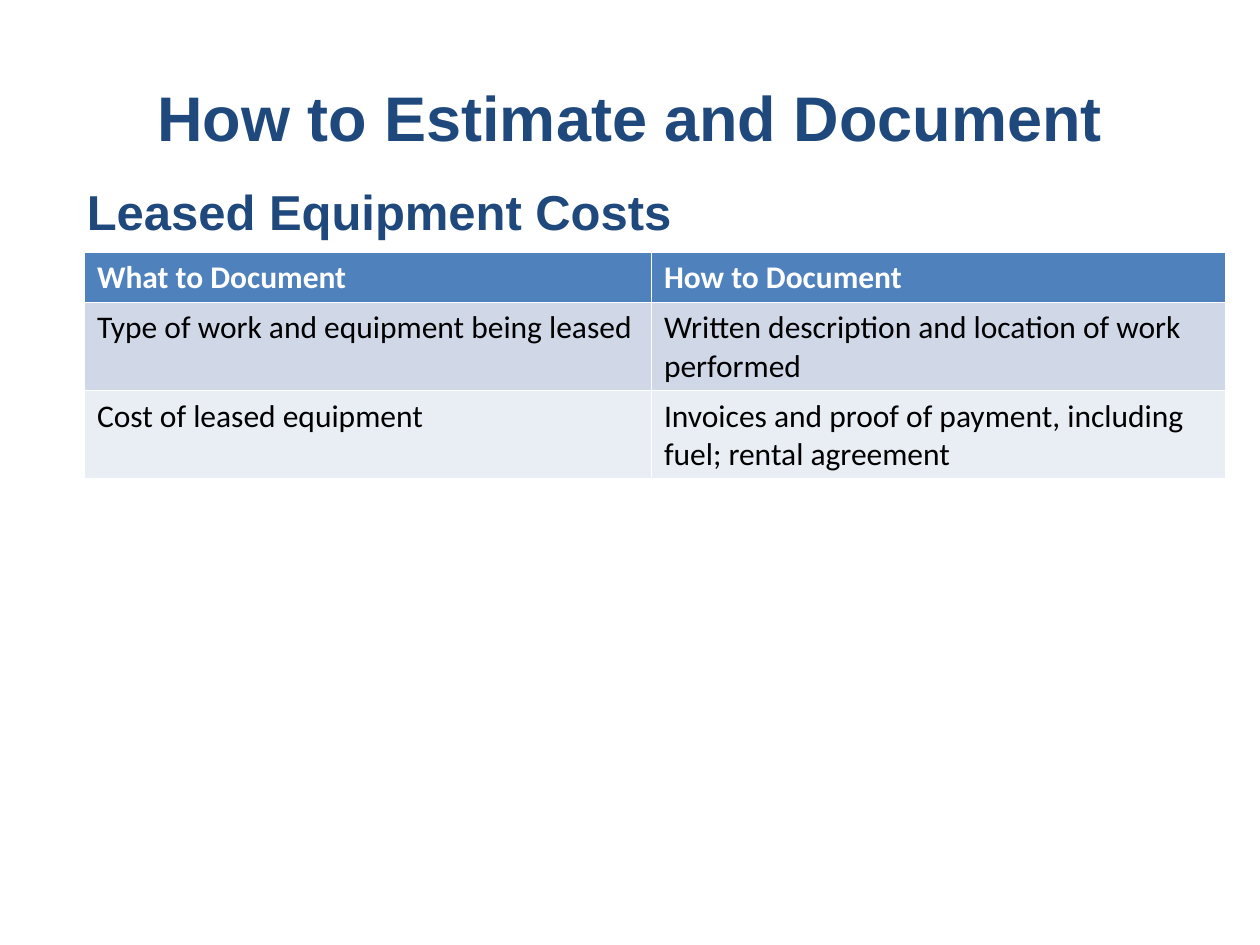
import pptx
import pptx.util
import pptx.dml.color
import pptx.enum.text

Inches = pptx.util.Inches
Pt = pptx.util.Pt
ALIGN = pptx.enum.text.PP_ALIGN
ANCHOR = pptx.enum.text.MSO_ANCHOR

COLORS = {
    "heading": "1F497D",
    "header": "4F81BD",
    "band_dark": "D0D8E8",
    "band_light": "E9EDF4",
    "white": "FFFFFF",
    "black": "000000",
}


class Deck:
    heading_font = "Arial"
    table_font = "Calibri"

    def __init__(self, width, height):
        self.prs = pptx.Presentation()
        self.prs.slide_width = Inches(width)
        self.prs.slide_height = Inches(height)
        self.s = None

    def add_slide(self):
        self.s = self.prs.slides.add_slide(self.prs.slide_layouts[6])

    def color(self, name):
        return pptx.dml.color.RGBColor.from_string(COLORS[name])

    def set_font(self, p, name, size, color, bold):
        p.font.name = name
        p.font.size = Pt(size)
        p.font.color.rgb = self.color(color)
        p.font.bold = bold

    def heading(self, text, box, size, align=ALIGN.LEFT, anchor=ANCHOR.TOP, left=0.1, top=0.05):
        sp = self.s.shapes.add_textbox(*map(Inches, box))
        tf = sp.text_frame
        tf.word_wrap = True
        tf.vertical_anchor = anchor
        tf.margin_left = Inches(left)
        tf.margin_top = Inches(top)
        p = tf.paragraphs[0]
        p.text = text
        p.alignment = align
        self.set_font(p, self.heading_font, size, "heading", True)

    def table(self, rows, left, top, widths, heights, size):
        box = map(Inches, (left, top, sum(widths), sum(heights)))
        table = self.s.shapes.add_table(len(rows), len(widths), *box).table
        for column, width in zip(table.columns, widths):
            column.width = Inches(width)
        for i, (row, height) in enumerate(zip(rows, heights)):
            table.rows[i].height = Inches(height)
            header = i == 0
            fill = "header" if header else ("band_light", "band_dark")[i % 2]
            for j, text in enumerate(row):
                cell = table.cell(i, j)
                cell.fill.solid()
                cell.fill.fore_color.rgb = self.color(fill)
                p = cell.text_frame.paragraphs[0]
                p.text = text
                self.set_font(p, self.table_font, size, "white" if header else "black", header)

    def save(self):
        self.prs.save("out.pptx")


def main():
    deck = Deck(10, 7.5)
    deck.add_slide()
    deck.heading("How to Estimate and Document", (0.5, 0.3, 9, 1.25), 36,
                 align=ALIGN.CENTER, anchor=ANCHOR.MIDDLE)
    deck.heading("Leased Equipment Costs", (0.53, 1.33, 9.17, 4.95), 28, left=0.16, top=0.11)
    deck.table(
        [
            ("What to Document", "How to Document"),
            ("Type of work and equipment being leased",
             "Written description and location of work performed"),
            ("Cost of leased equipment",
             "Invoices and proof of payment, including fuel; rental agreement"),
        ],
        0.67, 2, (4.5, 4.56), (0.4, 0.7, 0.7), 18,
    )
    deck.save()


if __name__ == "__main__":
    main()
